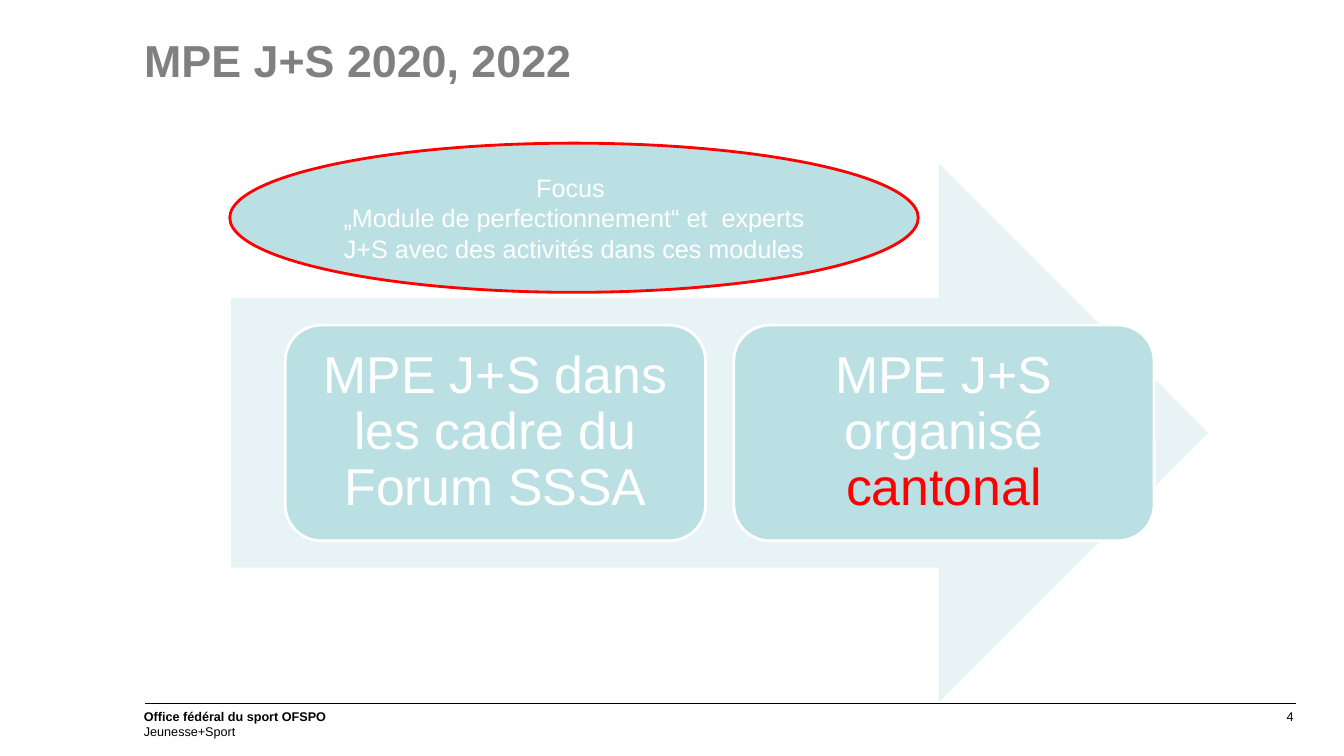
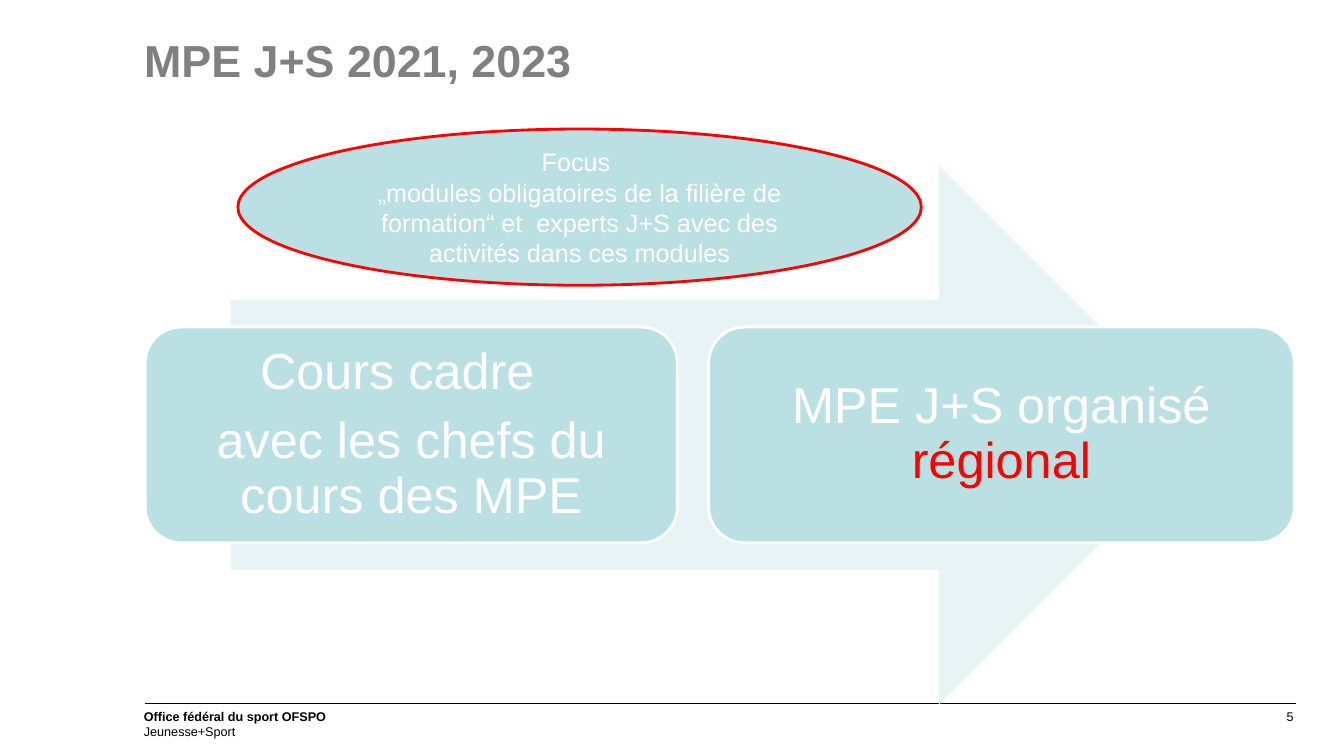
from dataclasses import dataclass

from lxml.etree import SubElement
from pptx import Presentation
from pptx.dml.color import RGBColor
from pptx.enum.shapes import MSO_CONNECTOR, MSO_SHAPE
from pptx.enum.text import MSO_ANCHOR, PP_ALIGN
from pptx.oxml.ns import qn
from pptx.util import Emu, Inches, Pt

SLIDE_WIDTH, SLIDE_HEIGHT = Emu(12192000), Emu(6858000)
COLUMNS, ROWS = 40, 30


@dataclass(frozen=True)
class Theme:
    font: str = "Arial"
    title: RGBColor = RGBColor(0x80, 0x80, 0x80)
    ink: RGBColor = RGBColor(0, 0, 0)
    white: RGBColor = RGBColor(0xFF, 0xFF, 0xFF)
    accent: RGBColor = RGBColor(0xFF, 0, 0)
    card: RGBColor = RGBColor(0xBB, 0xE0, 0xE3)
    arrow: RGBColor = RGBColor(0xE7, 0xF3, 0xF4)
    title_size: int = 32
    focus_size: int = 18
    footer_size: int = 9
    outline: float = 2
    rule: float = 0.75


THEME = Theme()


@dataclass(frozen=True)
class Box:
    left: float
    top: float
    width: float
    height: float

    def inside(self, left, top, width, height):
        return Box(self.left + left, self.top + top, width, height)

    def place(self):
        column, row = SLIDE_WIDTH / COLUMNS, SLIDE_HEIGHT / ROWS
        return (Emu(round(self.left * column)), Emu(round(self.top * row)),
                Emu(round(self.width * column)), Emu(round(self.height * row)))


PAGE = Box(0, 0, COLUMNS, ROWS)
TITLE = PAGE.inside(4.29, 1.12, 34.27, 4.56)
FOOTER = PAGE.inside(4.32, 27.92, 34.26, 1.6)


def apply(target, formats):
    for attribute, value in formats.items():
        setattr(target, attribute, value)


def write(frame, paragraphs, size, color, align=PP_ALIGN.LEFT, spacing=None,
          gap=0, insets=(0.1, 0.05), **frame_formats):
    side, end = (Inches(inset) for inset in insets)
    apply(frame, {"word_wrap": True, "margin_left": side, "margin_right": side,
                  "margin_top": end, "margin_bottom": end, **frame_formats})
    for index, runs in enumerate(paragraphs):
        paragraph = frame.add_paragraph() if index else frame.paragraphs[0]
        apply(paragraph, {"alignment": align, "line_spacing": spacing})
        if index and gap:
            paragraph.space_before = Pt(gap)
        for text, formats in runs:
            run = paragraph.add_run()
            run.text = text
            style = {"name": THEME.font, "size": Pt(size), "bold": False, **formats}
            run.font.color.rgb = style.pop("color", color)
            apply(run.font, style)


def add_figure(slide, kind, box, fill, outline=None):
    figure = slide.shapes.add_shape(kind, *box.place())
    figure.shadow.inherit = False
    figure.fill.solid()
    figure.fill.fore_color.rgb = fill
    if outline is None:
        figure.line.fill.background()
    else:
        figure.line.color.rgb = outline
        figure.line.width = Pt(THEME.outline)
    return figure.text_frame


def add_title(slide, box, title):
    frame = slide.shapes.add_textbox(*box.place()).text_frame
    write(frame, [[(title, {"bold": True})]], THEME.title_size, THEME.title,
          insets=(0, 0.05), word_wrap=False)


def add_footer(slide, box, number):
    left, top, width, _ = box.place()
    rule = slide.shapes.add_connector(
        MSO_CONNECTOR.STRAIGHT, left, top, left + width, top)
    rule.line.color.rgb = THEME.ink
    rule.line.width = Pt(THEME.rule)
    SubElement(rule._element.spPr, qn("a:effectLst"))

    office = slide.shapes.add_textbox(
        *box.inside(-0.33, 0, 17.1, box.height).place()).text_frame
    write(office, [[("Office fédéral du sport OFSPO", {"bold": True})],
                   [("Jeunesse+Sport", {})]], THEME.footer_size, THEME.ink)

    page = slide.shapes.add_textbox(
        *box.inside(box.width - 9.72, 0.2, 9.64, 0.64).place()).text_frame
    write(page, [[(str(number), {})]], THEME.footer_size, THEME.ink,
          align=PP_ALIGN.RIGHT, insets=(0, 0))


def add_process(slide, box, cards, card_size, focus_box, focus):
    add_figure(slide, MSO_SHAPE.RIGHT_ARROW, box, THEME.arrow)
    centred = {"align": PP_ALIGN.CENTER, "vertical_anchor": MSO_ANCHOR.MIDDLE}
    for left, width, paragraphs in cards:
        card_box = box.inside(left, box.height * 0.3, width, box.height * 0.4)
        card = add_figure(slide, MSO_SHAPE.ROUNDED_RECTANGLE, card_box,
                          THEME.card, THEME.white)
        write(card, paragraphs, card_size, THEME.white, spacing=0.9, gap=11,
              insets=(0.15, 0.15), **centred)
    bubble = add_figure(slide, MSO_SHAPE.OVAL, box.inside(*focus_box),
                        THEME.card, THEME.accent)
    write(bubble, [[("Focus ", {})], [(focus, {})]],
          THEME.focus_size, THEME.white, **centred)


def organised(level):
    return [[("MPE J+S organisé ", {}), (level, {"color": THEME.accent})]]


SLIDES = [
    {
        "number": 4,
        "title": "MPE J+S 2020, 2022",
        "process": {
            "box": PAGE.inside(6.87, 6.48, 29.1, 21.4),
            "cards": [
                (1.62, 12.51, [[("MPE J+S dans les cadre du Forum SSSA", {})]]),
                (14.97, 12.51, organised("cantonal")),
            ],
            "card_size": 37,
            "focus_box": (-0.03, -0.8, 20.49, 5.92),
            "focus": "„Module de perfectionnement“ et  experts J+S "
                     "avec des activités dans ces modules",
        },
    },
    {
        "number": 5,
        "title": "MPE J+S 2021, 2023",
        "process": {
            "box": PAGE.inside(6.87, 6.56, 29.1, 21.4),
            "cards": [
                (-2.55, 15.84, [[("Cours cadre  ", {})],
                                [("avec les chefs du cours des MPE", {})]]),
                (14.22, 17.43, organised("régional")),
            ],
            "card_size": 36,
            "focus_box": (0.21, -1.44, 20.34, 6.2),
            "focus": "„modules obligatoires de la filière de formation“ et  "
                     "experts J+S avec des activités dans ces modules",
        },
    },
]


def main():
    presentation = Presentation()
    apply(presentation, {"slide_width": SLIDE_WIDTH, "slide_height": SLIDE_HEIGHT})
    blank = presentation.slide_layouts[6]
    for content in SLIDES:
        slide = presentation.slides.add_slide(blank)
        add_footer(slide, FOOTER, content["number"])
        add_title(slide, TITLE, content["title"])
        add_process(slide, **content["process"])
    presentation.save("out.pptx")


if __name__ == "__main__":
    main()
